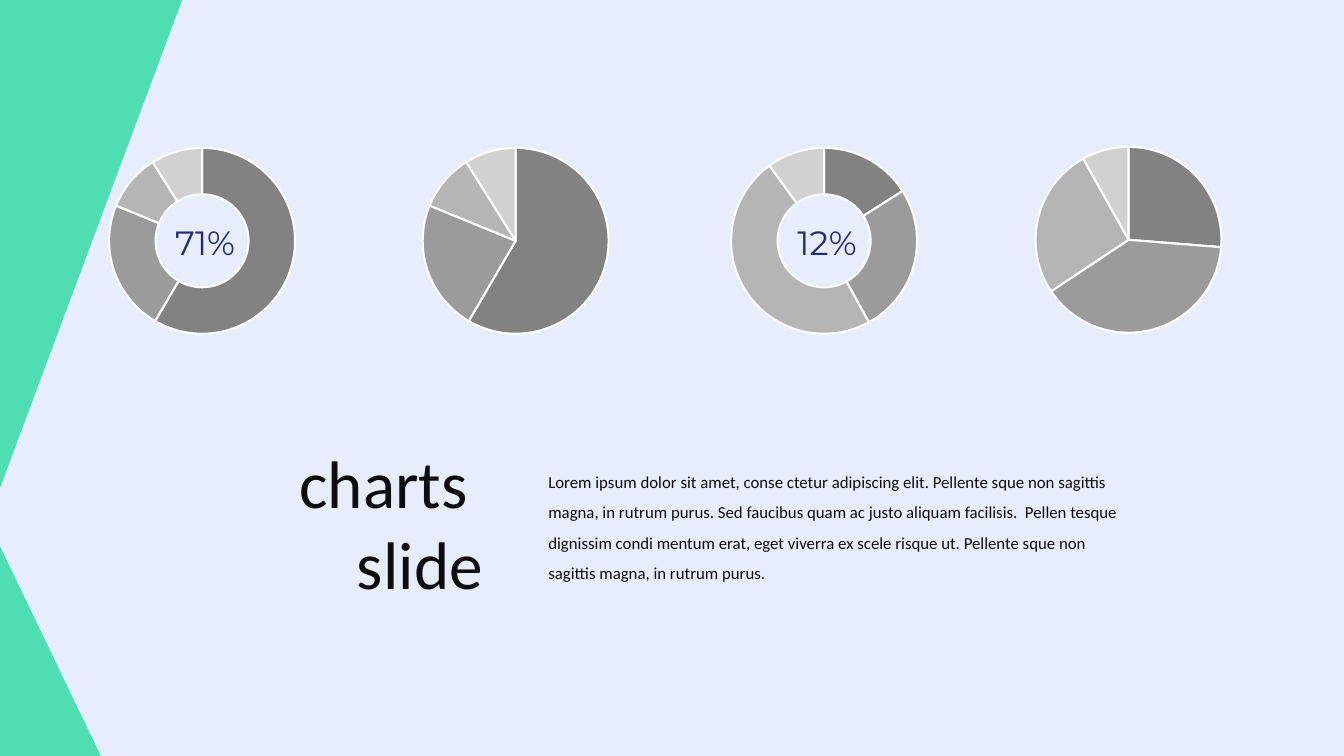
from dataclasses import dataclass

import lxml.etree
import pptx
import pptx.chart.data
import pptx.dml.color
import pptx.enum.chart
import pptx.enum.shapes
import pptx.enum.text
import pptx.oxml
import pptx.oxml.ns
import pptx.util

qn = pptx.oxml.ns.qn
Align = pptx.enum.text.PP_ALIGN
Kind = pptx.enum.chart.XL_CHART_TYPE


@dataclass(frozen=True)
class Theme:
    background: str = "E7EDFD"
    accent: str = "4FDEB2"
    ink: str = "0D0D0D"
    label: str = "262A7C"
    border: str = "FFFFFF"
    chart_ink: str = "000000"
    slices: tuple[str, ...] = ("828282", "9B9B9B", "B5B5B5", "D1D1D1")
    font: str = "Calibri"
    label_font: str = "Montserrat"
    title_size: int = 48
    label_size: int = 24
    body_size: int = 12
    chart_size: int = 10
    border_width: float = 1.5


@dataclass(frozen=True)
class Area:
    """Percent shares of the slide's width and height."""
    left: float
    top: float
    width: float
    height: float


@dataclass(frozen=True)
class Triangle:
    area: Area
    hangs: bool


@dataclass(frozen=True)
class RoundChart:
    kind: Kind
    area: Area
    values: tuple[int, ...]
    label: str = ""


THEME = Theme()
WIDTH = pptx.util.Inches(13.33)
HEIGHT = pptx.util.Inches(7.5)
DIAMETER = 24.6
HOLE = 75
LABEL_WIDTH, LABEL_HEIGHT, LABEL_TOP, LABEL_SHIFT = 7.8, 6.67, 28.67, 0.22

TRIANGLES = (
    Triangle(Area(0, 72.27, 7.5, 27.73), hangs=False),
    Triangle(Area(0, -0.13, 13.58, 64.67), hangs=True),
)
CHARTS = (
    RoundChart(Kind.DOUGHNUT, Area(4.65, 17.73, 20.78, 28.27), (59, 23, 10, 9), "71%"),
    RoundChart(Kind.PIE, Area(27.83, 17.73, 21.08, 28.27), (59, 23, 10, 9)),
    RoundChart(Kind.DOUGHNUT, Area(50.93, 17.73, 20.78, 28.27), (16, 26, 48, 10), "12%"),
    RoundChart(Kind.PIE, Area(73.43, 17.6, 21.08, 28.27), (26, 39, 26, 8)),
)
TITLE_AREA = Area(15.9, 57.73, 20.78, 22.93)
BODY_AREA = Area(40.05, 60.4, 44.03, 17.47)
TITLE = ("charts ", "slide")
BODY = (
    "Lorem ipsum dolor sit amet, conse ctetur adipiscing elit. Pellente sque non "
    "sagittis magna, in rutrum purus. Sed faucibus quam ac justo aliquam facilisis.  "
    "Pellen tesque dignissim condi mentum erat, eget viverra ex scele risque ut. "
    "Pellente sque non sagittis magna, in rutrum purus.",
)


def rgb(code: str) -> pptx.dml.color.RGBColor:
    return pptx.dml.color.RGBColor.from_string(code)


def bounds(area: Area) -> tuple[int, int, int, int]:
    return (round(area.left * WIDTH / 100), round(area.top * HEIGHT / 100),
            round(area.width * WIDTH / 100), round(area.height * HEIGHT / 100))


def write(box, area: Area, lines: tuple[str, ...], font: str, size: int,
          color: str, align: Align, spacing: float = 1.0) -> None:
    box.left, box.top, box.width, box.height = bounds(area)
    frame = box.text_frame
    frame.word_wrap = True
    frame.auto_size = pptx.enum.text.MSO_AUTO_SIZE.SHAPE_TO_FIT_TEXT
    frame.vertical_anchor = pptx.enum.text.MSO_ANCHOR.TOP
    frame.text = "\n".join(lines)
    for para in frame.paragraphs:
        settings = para._p.get_or_add_pPr()
        settings.set("marL", "0")
        settings.set("indent", "0")
        lxml.etree.SubElement(settings, qn("a:buNone"))
        para.alignment = align
        para.line_spacing = spacing
        para.space_before = pptx.util.Pt(0)
        para.font.name = font
        para.font.size = pptx.util.Pt(size)
        para.font.color.rgb = rgb(color)


def draw_triangle(page, triangle: Triangle) -> None:
    shape = page.shapes.add_shape(
        pptx.enum.shapes.MSO_SHAPE.RIGHT_TRIANGLE, *bounds(triangle.area))
    shape.shadow.inherit = False
    shape.fill.solid()
    shape.fill.fore_color.rgb = rgb(THEME.accent)
    shape.line.fill.background()
    if triangle.hangs:
        shape.rotation = 180
        shape._element.spPr.find(qn("a:xfrm")).set("flipH", "1")


def fit_plot(chart, area: Area) -> None:
    plot_area = chart._chartSpace.find(".//" + qn("c:plotArea"))
    for layout in plot_area.findall(qn("c:layout")):
        plot_area.remove(layout)
    layout = lxml.etree.Element(qn("c:layout"))
    manual = lxml.etree.SubElement(layout, qn("c:manualLayout"))
    wide = DIAMETER * HEIGHT / (area.width * WIDTH)
    high = DIAMETER / area.height
    for tag, value in (("layoutTarget", "inner"), ("xMode", "edge"), ("yMode", "edge"),
                       ("x", (1 - wide) / 2), ("y", (1 - high) / 2),
                       ("w", wide), ("h", high)):
        lxml.etree.SubElement(manual, qn("c:" + tag)).set("val", str(value))
    plot_area.insert(0, layout)


def clear_background(chart) -> None:
    settings = lxml.etree.Element(qn("c:spPr"))
    lxml.etree.SubElement(settings, qn("a:noFill"))
    line = lxml.etree.SubElement(settings, qn("a:ln"))
    lxml.etree.SubElement(line, qn("a:noFill"))
    chart._chartSpace.find(qn("c:chart")).addnext(settings)


def draw_chart(page, item: RoundChart) -> None:
    data = pptx.chart.data.CategoryChartData()
    data.categories = [str(number + 1) for number in range(len(item.values))]
    data.add_series("Series 1", item.values)
    chart = page.shapes.add_chart(item.kind, *bounds(item.area), data).chart
    chart.has_legend = False
    chart.has_title = False
    chart.font.name = THEME.font
    chart.font.size = pptx.util.Pt(THEME.chart_size)
    chart.font.color.rgb = rgb(THEME.chart_ink)
    clear_background(chart)
    fit_plot(chart, item.area)
    plot = chart.plots[0]
    plot.vary_by_categories = True
    for index, color in enumerate(THEME.slices):
        piece = plot.series[0].points[index].format
        piece.fill.solid()
        piece.fill.fore_color.rgb = rgb(color)
        piece.line.color.rgb = rgb(THEME.border)
        piece.line.width = pptx.util.Pt(THEME.border_width)
    for hole in chart._chartSpace.iter(qn("c:holeSize")):
        hole.set("val", str(HOLE))


def draw_label(page, item: RoundChart) -> None:
    left = item.area.left + (item.area.width - LABEL_WIDTH) / 2 + LABEL_SHIFT
    area = Area(left, LABEL_TOP, LABEL_WIDTH, LABEL_HEIGHT)
    write(page.shapes.add_textbox(*bounds(area)), area, (item.label,),
          THEME.label_font, THEME.label_size, THEME.label, Align.CENTER)


def main() -> None:
    deck = pptx.Presentation()
    deck.slide_width, deck.slide_height = WIDTH, HEIGHT
    page = deck.slides.add_slide(deck.slide_layouts.get_by_name("Title and Content"))
    page.background.fill.solid()
    page.background.fill.fore_color.rgb = rgb(THEME.background)
    for triangle in TRIANGLES:
        draw_triangle(page, triangle)
    write(page.shapes.title, TITLE_AREA, TITLE, THEME.font, THEME.title_size,
          THEME.ink, Align.RIGHT)
    write(page.placeholders[1], BODY_AREA, BODY, THEME.font, THEME.body_size,
          THEME.ink, Align.LEFT, 1.5)
    for item in CHARTS:
        draw_chart(page, item)
        if item.label:
            draw_label(page, item)
    deck.save("out.pptx")


if __name__ == "__main__":
    main()
